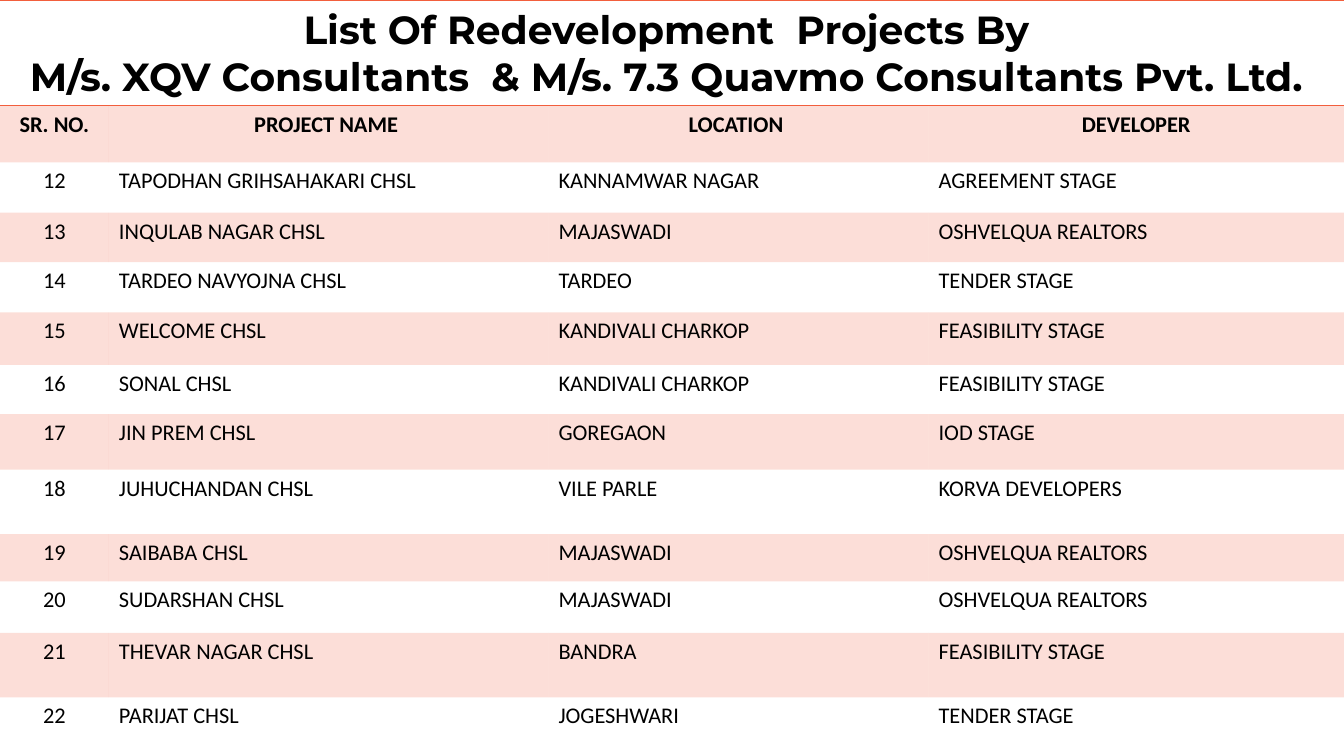
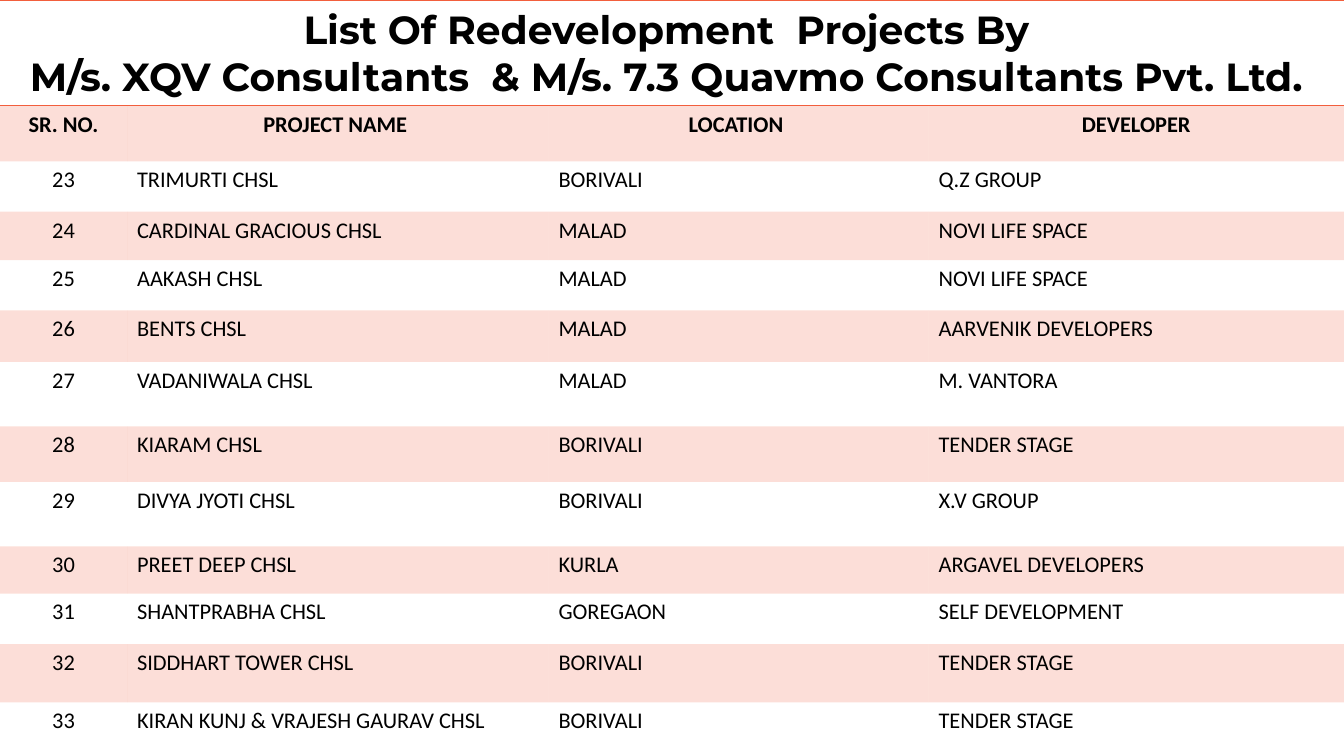
from lxml import etree
from pptx import Presentation
from pptx.dml.color import RGBColor
from pptx.enum.text import MSO_AUTO_SIZE, PP_ALIGN
from pptx.oxml.ns import qn
from pptx.util import Inches, Pt

CENTER, LEFT = PP_ALIGN.CENTER, PP_ALIGN.LEFT
FIT_SHAPE = MSO_AUTO_SIZE.SHAPE_TO_FIT_TEXT

# Shared look
WIDTH, HEIGHT = 13.33, 7.5
ACCENT, BLACK = "F25E3D", "000000"
TINT_ALPHA = 20
PLAIN_STYLE = "{2D5ABB26-0587-4C30-8999-92F81FD0307C}"
TITLE_FONT = {"name": "Montserrat", "size": Pt(28), "bold": True}
HEAD_FONT = {"name": "Calibri", "size": Pt(16), "bold": True}
BODY_FONT = {**HEAD_FONT, "bold": False}

# Content
TITLE = ["List Of Redevelopment  Projects By ",
         "M/s. XQV Consultants  & M/s. 7.3 Quavmo Consultants Pvt. Ltd. "]
HEADINGS = ("SR. NO.", "PROJECT NAME ", "LOCATION ", "DEVELOPER")
SLIDES = [
    {
        "first": 12,
        "cols": [1.08, 4.36, 3.77, 4.12],
        "heights": [1.05, 0.56, 0.5, 0.49, 0.5, 0.52, 0.49,
                    0.55, 0.64, 0.47, 0.51, 0.64, 0.62],
        "projects": [
            ("TAPODHAN GRIHSAHAKARI CHSL", "KANNAMWAR NAGAR", "AGREEMENT STAGE"),
            ("INQULAB NAGAR CHSL", "MAJASWADI", "OSHVELQUA REALTORS"),
            ("TARDEO NAVYOJNA CHSL", "TARDEO", "TENDER STAGE"),
            ("WELCOME CHSL", "KANDIVALI CHARKOP", "FEASIBILITY STAGE"),
            ("SONAL CHSL", "KANDIVALI CHARKOP", "FEASIBILITY STAGE"),
            ("JIN PREM CHSL", "GOREGAON", "IOD STAGE"),
            ("JUHUCHANDAN CHSL", "VILE PARLE", "KORVA DEVELOPERS"),
            ("SAIBABA CHSL", "MAJASWADI", "OSHVELQUA REALTORS"),
            ("SUDARSHAN CHSL", "MAJASWADI", "OSHVELQUA REALTORS"),
            ("THEVAR NAGAR CHSL", "BANDRA", "FEASIBILITY STAGE"),
            ("PARIJAT CHSL", "JOGESHWARI", "TENDER STAGE"),
        ],
    },
    {
        "first": 23,
        "cols": [1.26, 4.18, 3.77, 4.12],
        "heights": [1.05, 0.55, 0.5, 0.48, 0.5, 0.51, 0.64,
                    0.55, 0.64, 0.47, 0.5, 0.58, 0.56],
        "projects": [
            ("TRIMURTI CHSL", "BORIVALI", "Q.Z GROUP"),
            ("CARDINAL GRACIOUS CHSL", "MALAD", "NOVI LIFE SPACE"),
            ("AAKASH CHSL", "MALAD", "NOVI LIFE SPACE"),
            ("BENTS CHSL", "MALAD", "AARVENIK DEVELOPERS"),
            ("VADANIWALA CHSL", "MALAD", "M. VANTORA"),
            ("KIARAM CHSL", "BORIVALI", "TENDER STAGE"),
            ("DIVYA JYOTI CHSL", "BORIVALI", "X.V GROUP"),
            ("PREET DEEP CHSL", "KURLA", "ARGAVEL DEVELOPERS"),
            ("SHANTPRABHA CHSL", "GOREGAON", "SELF DEVELOPMENT"),
            ("SIDDHART TOWER CHSL", "BORIVALI", "TENDER STAGE"),
            ("KIRAN KUNJ & VRAJESH GAURAV CHSL", "BORIVALI", "TENDER STAGE"),
        ],
    },
]


def rgb(value):
    return RGBColor.from_string(value)


def write(p, text, font, align):
    p.alignment = align
    r = p.add_run()
    r.text = text
    for name, value in font.items():
        setattr(r.font, name, value)
    r.font.color.rgb = rgb(BLACK)


def add_border(cell, side):
    ln = etree.SubElement(cell._tc.get_or_add_tcPr(), qn("a:ln" + side), w=str(Pt(1)))
    fill = etree.SubElement(ln, qn("a:solidFill"))
    etree.SubElement(fill, qn("a:srgbClr"), val=ACCENT)


def fill_cell(cell, tinted):
    if not tinted:
        cell.fill.background()
        return
    cell.fill.solid()
    cell.fill.fore_color.rgb = rgb(ACCENT)
    color = cell._tc.tcPr.find(qn("a:solidFill")).find(qn("a:srgbClr"))
    etree.SubElement(color, qn("a:alpha"), val=str(TINT_ALPHA * 1000))


def add_project_table(s, data):
    heights, cols = data["heights"], data["cols"]
    frame = s.shapes.add_table(len(heights), len(cols), 0, 0,
                               Inches(WIDTH), Inches(sum(heights)))
    table = frame.table
    table.first_row = table.horz_banding = False
    table._tbl.tblPr.find(qn("a:tableStyleId")).text = PLAIN_STYLE
    for column, width in zip(table.columns, cols):
        column.width = Inches(width)
    for row, height in zip(table.rows, heights):
        row.height = Inches(height)

    # The top row is merged and stays empty behind the title
    numbered = [(str(n), *project)
                for n, project in enumerate(data["projects"], data["first"])]
    rows = [("",) * len(cols), HEADINGS, *numbered]
    table.cell(0, 0).merge(table.cell(0, len(cols) - 1))
    last = len(rows) - 1
    for i, texts in enumerate(rows):
        sides = "TB" if i == 0 else "B" if i == last else ""
        for j, text in enumerate(texts):
            cell = table.cell(i, j)
            for side in sides:
                add_border(cell, side)
            fill_cell(cell, i % 2 == 1)
            if text:
                write(cell.text_frame.paragraphs[0], text,
                      HEAD_FONT if i == 1 else BODY_FONT,
                      CENTER if i == 1 or j == 0 else LEFT)


def add_title(s):
    tf = s.shapes.add_textbox(0, 0, Inches(WIDTH), Inches(1.04)).text_frame
    tf.word_wrap = True
    tf.auto_size = FIT_SHAPE
    for i, line in enumerate(TITLE):
        p = tf.add_paragraph() if i else tf.paragraphs[0]
        write(p, line, TITLE_FONT, CENTER)


def main():
    prs = Presentation()
    prs.slide_width, prs.slide_height = Inches(WIDTH), Inches(HEIGHT)
    for data in SLIDES:
        s = prs.slides.add_slide(prs.slide_layouts[6])
        add_project_table(s, data)
        add_title(s)
    prs.save("out.pptx")


if __name__ == "__main__":
    main()
